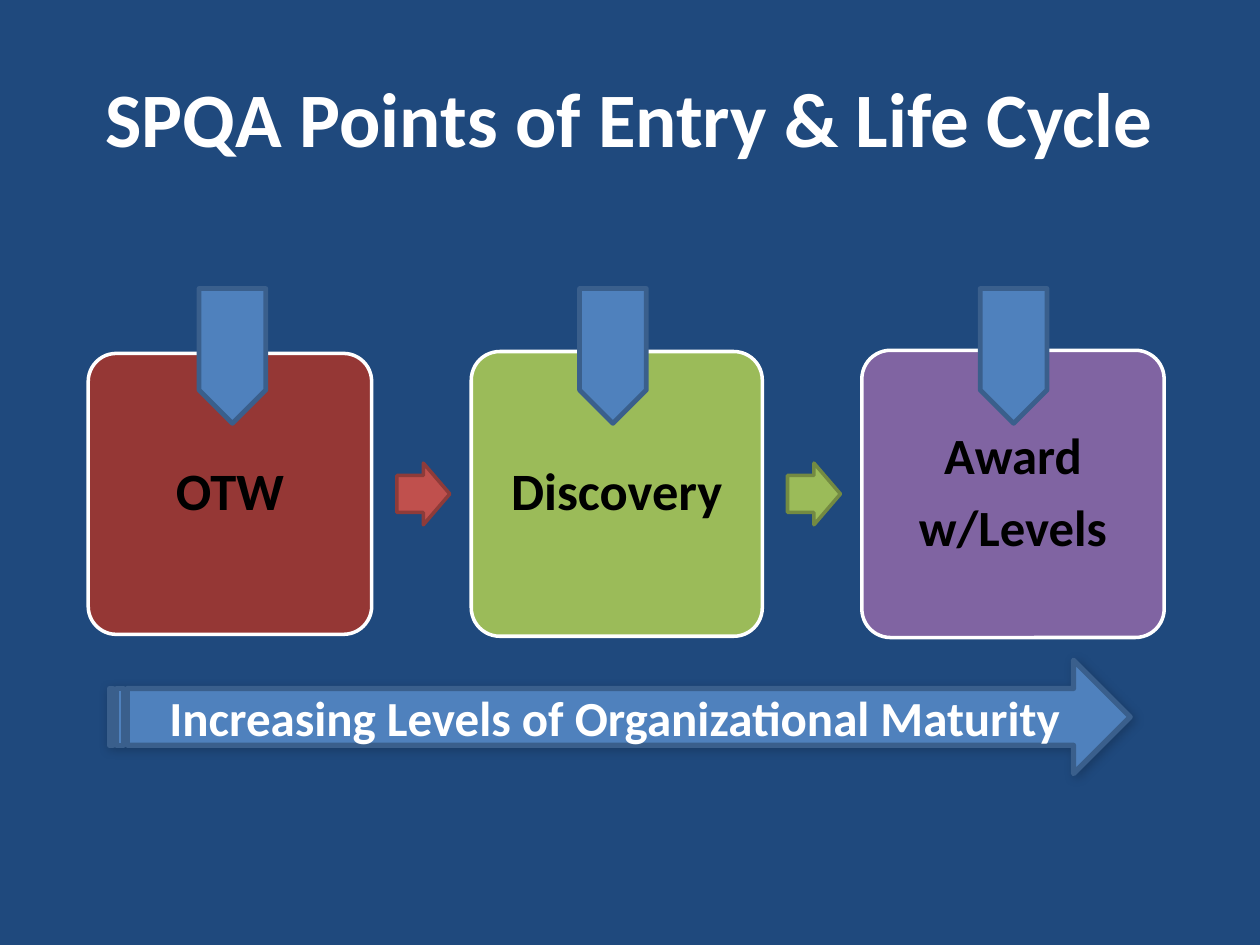
from lxml import etree
from pptx import Presentation
from pptx.dml.color import RGBColor
from pptx.enum.shapes import MSO_SHAPE
from pptx.enum.text import MSO_ANCHOR, PP_ALIGN
from pptx.oxml.ns import qn
from pptx.util import Inches, Pt

BOX = MSO_SHAPE.ROUNDED_RECTANGLE
RIGHT = MSO_SHAPE.RIGHT_ARROW
DOWN = MSO_SHAPE.DOWN_ARROW
STRIPED = MSO_SHAPE.STRIPED_RIGHT_ARROW
CENTER = PP_ALIGN.CENTER
MIDDLE = MSO_ANCHOR.MIDDLE

COLORS = {
    "navy": "1F497D", "white": "FFFFFF", "black": "000000",
    "maroon": "953735", "red": "C0504D", "red_edge": "8E3B39",
    "green": "9BBB59", "green_edge": "738A42", "purple": "8064A2",
    "blue": "4F81BD", "blue_edge": "3A5F8C",
}

TITLE = "SPQA Points of Entry & Life Cycle"
MATURITY = "Increasing Levels of Organizational Maturity"
# lines, text size, fill, left, width, height, left of entry arrow
STAGES = [
    (["OTW"], 30, "maroon", 0.7, 2.25, 2.23, 1.58),
    (["Discovery"], 30, "green", 3.74, 2.31, 2.26, 4.6),
    (["Award", "w/Levels"], 29, "purple", 6.84, 2.4, 2.28, 7.78),
]
# left, fill, line
STEPS = [(3.15, "red", "red_edge"), (6.25, "green", "green_edge")]
MID_Y = 3.92  # shared centre line of stages and step arrows


def rgb(name):
    return RGBColor.from_string(COLORS[name])


def add_shape(s, kind, box, fill, line, weight, adj=()):
    sp = s.shapes.add_shape(kind, *[Inches(v) for v in box])
    sp.shadow.inherit = False
    sp.fill.solid()
    sp.fill.fore_color.rgb = rgb(fill)
    sp.line.color.rgb = rgb(line)
    sp.line.width = Pt(weight)
    for i, value in enumerate(adj):
        sp.adjustments[i] = value
    return sp


def write(sp, lines, size, color, spacing=None, after=None):
    tf = sp.text_frame
    tf.word_wrap = True
    tf.vertical_anchor = MIDDLE
    for i, text in enumerate(lines):
        p = tf.add_paragraph() if i else tf.paragraphs[0]
        p.alignment = CENTER
        p.line_spacing = spacing
        p.space_after = after
        r = p.add_run()
        r.text = text
        r.font.name = "Calibri"
        r.font.size = Pt(size)
        r.font.bold = True
        r.font.color.rgb = rgb(color)


def add_shadow(sp):
    effects = sp._element.spPr.find(qn("a:effectLst"))
    shadow = etree.SubElement(effects, qn("a:outerShdw"), blurRad=str(Pt(6)),
                              dist=str(Pt(1)), dir=str(45 * 60000))
    color = etree.SubElement(shadow, qn("a:srgbClr"), val=COLORS["black"])
    etree.SubElement(color, qn("a:alpha"), val="20000")


def main():
    prs = Presentation()
    prs.slide_width, prs.slide_height = Inches(10), Inches(7.5)
    s = prs.slides.add_slide(prs.slide_layouts[5])
    s.background.fill.solid()
    s.background.fill.fore_color.rgb = rgb("navy")

    # Title
    title = s.shapes.title
    title.left, title.top = Inches(0.5), Inches(0.3)
    title.width, title.height = Inches(9), Inches(1.25)
    write(title, [TITLE], 44, "white")

    # Stages
    for lines, size, fill, left, width, height, _ in STAGES:
        box = (left, MID_Y - height / 2, width, height)
        sp = add_shape(s, BOX, box, fill, "white", 2, [0.1])
        write(sp, lines, size, "black", 0.9, Pt(0.35 * size))

    # Steps between stages
    for left, fill, line in STEPS:
        add_shape(s, RIGHT, (left, MID_Y - 0.245, 0.42, 0.49), fill, line, 2, [0.6, 0.5])

    # Maturity arrow
    sp = add_shape(s, STRIPED, (0.87, 5.24, 8.1, 0.9), "blue", "blue_edge", 3)
    add_shadow(sp)
    write(sp, [MATURITY], 28, "white")

    # Entry arrows
    for *_, left in STAGES:
        add_shape(s, DOWN, (left, 2.29, 0.53, 1.07), "blue", "blue_edge", 2.75, [1, 0.5])

    prs.save("out.pptx")


if __name__ == "__main__":
    main()
